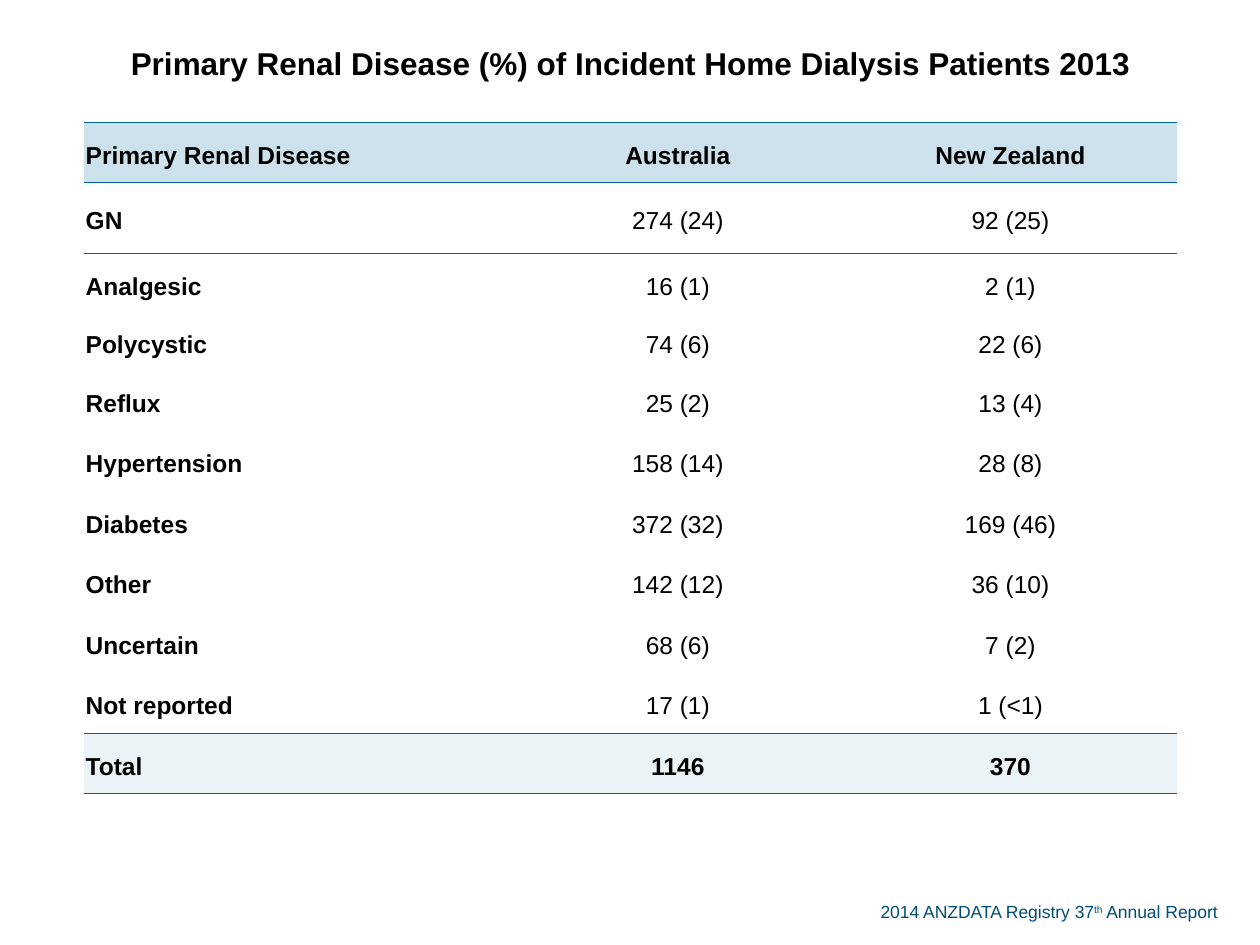
from lxml.etree import SubElement
from pptx import Presentation
from pptx.dml.color import RGBColor
from pptx.enum.text import MSO_ANCHOR as Anchor, MSO_AUTO_SIZE as AutoSize, PP_ALIGN as Align
from pptx.oxml import parse_xml
from pptx.oxml.ns import nsdecls, qn
from pptx.util import Inches, Pt

BLACK, RULE, HEADER_FILL, TOTAL_FILL, CREDIT = "000000", "006699", "CCE1EB", "EBF3F7", "004D73"
PLAIN_STYLE = "{2D5ABB26-0587-4C30-8999-92F81FD0307C}"  # no style, no grid

TITLE = "Primary Renal Disease (%) of Incident Home Dialysis Patients 2013"
HEADER = ("Primary Renal Disease", "Australia", "New Zealand")
DISEASES = [
    ("GN", "274 (24)", "92 (25)"),
    ("Analgesic", "16 (1)", "2 (1)"),
    ("Polycystic", "74 (6)", "22 (6)"),
    ("Reflux", "25 (2)", "13 (4)"),
    ("Hypertension", "158 (14)", "28 (8)"),
    ("Diabetes", "372 (32)", "169 (46)"),
    ("Other", "142 (12)", "36 (10)"),
    ("Uncertain", "68 (6)", "7 (2)"),
    ("Not reported", "17 (1)", "1 (<1)"),
]
TOTAL = ("Total", "1146", "370")
COLUMN_WIDTHS = (3.39, 2.64, 2.64)
ROW_HEIGHTS = (0.97, 0.48, 0.56, 0.48, 0.45) + (0.48,) * 7


def color(value):
    return RGBColor.from_string(value)


def set_font(font, size, tint, bold=False):
    font.name, font.size, font.bold = "Arial", Pt(size), bold
    font.color.rgb = color(tint)


def rule(cell, edge):
    """Draw a thin line on one edge of a cell: lnT or lnB."""
    line = parse_xml(
        f'<a:{edge} {nsdecls("a")} w="{Pt(0.5)}"><a:solidFill>'
        f'<a:srgbClr val="{RULE}"/></a:solidFill></a:{edge}>')
    cell._tc.get_or_add_tcPr().insert(0, line)


def fill_cell(cell, text, size, bold, align):
    cell.vertical_anchor = Anchor.MIDDLE
    cell.margin_left = cell.margin_top = cell.margin_right = Inches(0.01)
    cell.margin_bottom = 0
    paragraph = cell.text_frame.paragraphs[0]
    paragraph.text = text
    paragraph.alignment = align
    paragraph.line_spacing = 1.19
    paragraph.space_after = Pt(14)
    set_font(paragraph.font, size, BLACK, bold)


def add_disease_table(slide, left, top, width, height):
    rows = [(TITLE, "", ""), HEADER, *DISEASES, TOTAL]
    table = slide.shapes.add_table(len(rows), len(HEADER), left, top, width, height).table
    table.first_row = table.horz_banding = False
    table._tbl.tblPr.find(qn("a:tableStyleId")).text = PLAIN_STYLE
    for column, column_width in zip(table.columns, COLUMN_WIDTHS):
        column.width = Inches(column_width)
    for row, row_height in zip(table.rows, ROW_HEIGHTS):
        row.height = Inches(row_height)
    table.cell(0, 0).merge(table.cell(0, 2))

    last = len(rows) - 1
    fills = {1: HEADER_FILL, last: TOTAL_FILL}
    ruled_below = (0, 1, last - 1, last)
    for r, texts in enumerate(rows):
        for c, text in enumerate(texts):
            cell = table.cell(r, c)
            bold = c == 0 or r in fills
            centred = c > 0 or r == 0
            fill_cell(cell, text, 14 if r else 18, bold, Align.CENTER if centred else Align.LEFT)
            if r in fills:
                cell.fill.solid()
                cell.fill.fore_color.rgb = color(fills[r])
            else:
                cell.fill.background()
            # Inserted at the front, so the bottom edge goes in before the top
            if r in ruled_below:
                rule(cell, "lnB")
            if r - 1 in ruled_below:
                rule(cell, "lnT")


def add_credit(slide, left, top, width, height):
    frame = slide.shapes.add_textbox(left, top, width, height).text_frame
    frame.word_wrap = True
    frame.auto_size = AutoSize.SHAPE_TO_FIT_TEXT
    paragraph = frame.paragraphs[0]
    for text in ("2014 ANZDATA Registry 37", "th", " Annual Report"):
        run = paragraph.add_run()
        run.text = text
        set_font(run.font, 10, CREDIT)
        if text == "th":
            run.font._element.set("baseline", "30000")


def main():
    deck = Presentation()
    deck.slide_width, deck.slide_height = Inches(10), Inches(7.5)
    slide = deck.slides.add_slide(deck.slide_layouts[6])
    # Source line at the foot, then the table with its title row
    add_credit(slide, Inches(6.89), Inches(7.1), Inches(2.99), Inches(0.27))
    add_disease_table(slide, Inches(0.67), 0, Inches(8.66), Inches(6.3))
    deck.save("out.pptx")


if __name__ == "__main__":
    main()
